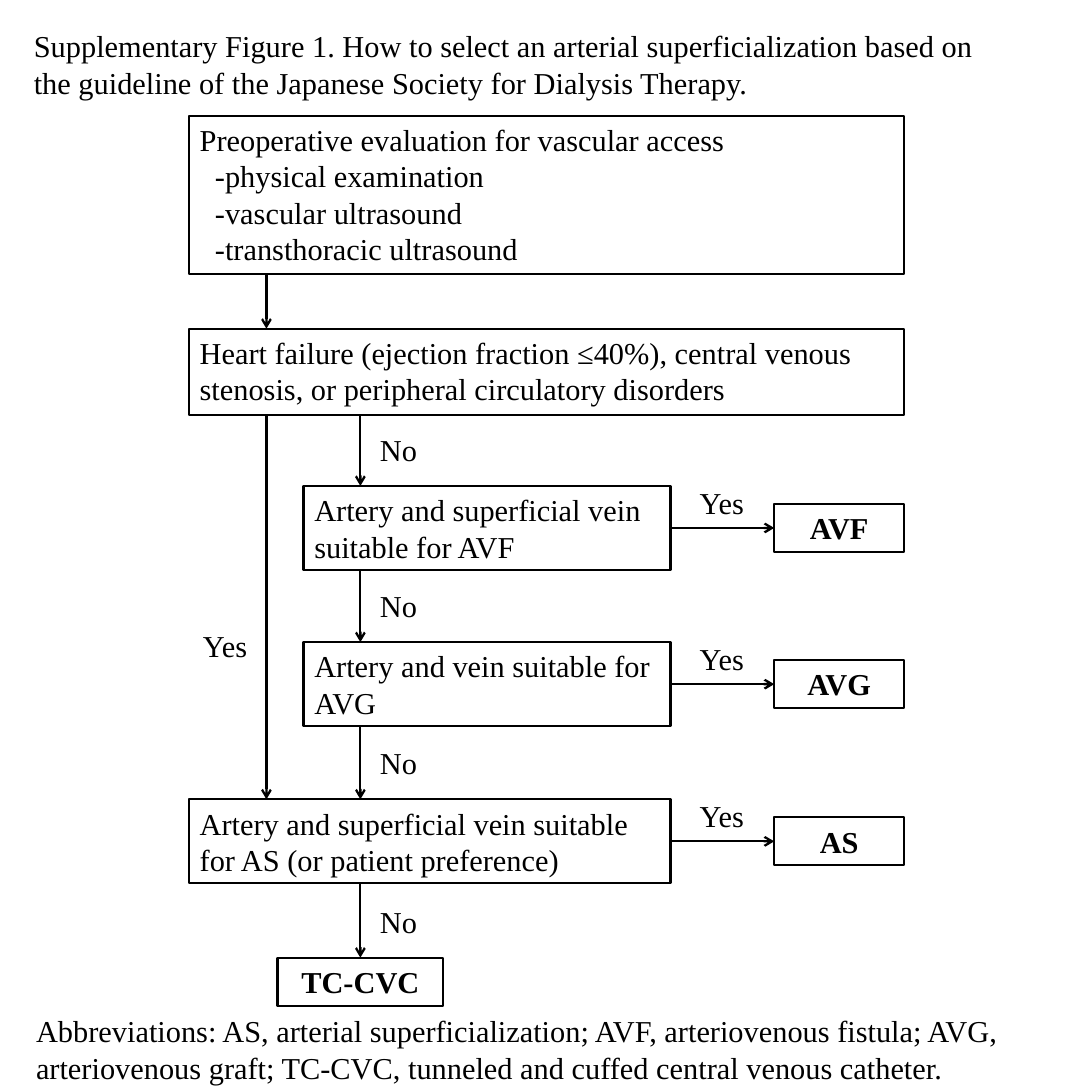
from dataclasses import dataclass

import pptx
import pptx.dml.color
import pptx.enum.shapes
import pptx.enum.text
import pptx.oxml
import pptx.oxml.ns
import pptx.util
from pptx.util import Inches

LEFT = pptx.enum.text.PP_ALIGN.LEFT
CENTER = pptx.enum.text.PP_ALIGN.CENTER
TOP_SIDE, LEFT_SIDE, RIGHT_SIDE = 0, 1, 3


@dataclass(frozen=True)
class Theme:
    """Colours, font and sizes of the flowchart."""
    ink = pptx.dml.color.RGBColor(0, 0, 0)
    font = "Times New Roman"
    text_size = pptx.util.Pt(20)
    line_width = pptx.util.Pt(1.5)


THEME = Theme()


def write_text(shape, text, align=LEFT, bold=False):
    """Put text into a shape and format it."""
    frame = shape.text_frame
    frame.text = text
    frame.word_wrap = True
    frame.vertical_anchor = pptx.enum.text.MSO_ANCHOR.TOP
    for paragraph in frame.paragraphs:
        paragraph.alignment = align
        for run in paragraph.runs:
            run.font.name = THEME.font
            run.font.size = THEME.text_size
            run.font.bold = bold
            run.font.color.rgb = THEME.ink


def add_label(slide, left, top, text, align=LEFT, width=1.08, height=0.44):
    """Add a text box without outline."""
    label = slide.shapes.add_textbox(Inches(left), Inches(top), Inches(width), Inches(height))
    write_text(label, text, align)
    return label


def add_caption(slide, left, top, width, text):
    """Add a caption with wider margins."""
    frame = add_label(slide, left, top, text, width=width, height=0.81).text_frame
    frame.margin_left = frame.margin_right = Inches(0.13)
    frame.margin_top = frame.margin_bottom = Inches(0.07)


def add_box(slide, left, top, width, height, text, align=LEFT, bold=False):
    """Add an outlined box with text."""
    box = slide.shapes.add_shape(
        pptx.enum.shapes.MSO_SHAPE.RECTANGLE,
        Inches(left), Inches(top), Inches(width), Inches(height))
    box.shadow.inherit = False
    box.fill.background()
    box.line.color.rgb = THEME.ink
    box.line.width = THEME.line_width
    write_text(box, text, align, bold)
    return box


def indent_items(box):
    """Indent every paragraph of a box after the first."""
    for paragraph in box.text_frame.paragraphs[1:]:
        paragraph._p.get_or_add_pPr().set("marL", str(Inches(0.14)))


def add_arrow(slide, x1=0, y1=0, x2=0, y2=0):
    """Add a straight line with an open arrowhead at its end."""
    arrow = slide.shapes.add_connector(
        pptx.enum.shapes.MSO_CONNECTOR.STRAIGHT,
        Inches(x1), Inches(y1), Inches(x2), Inches(y2))
    arrow.line.color.rgb = THEME.ink
    arrow.line.width = THEME.line_width
    head = pptx.oxml.parse_xml(f'<a:tailEnd {pptx.oxml.ns.nsdecls("a")} type="arrow"/>')
    arrow.line._get_or_add_ln().append(head)
    effects = pptx.oxml.parse_xml(f'<a:effectLst {pptx.oxml.ns.nsdecls("a")}/>')
    arrow._element.spPr.append(effects)
    return arrow


def add_no_branch(slide, start, end):
    """Add a downward arrow labelled No."""
    add_label(slide, 3.38, end - 0.55, "No")
    return add_arrow(slide, 3.3, start, 3.3, end)


def add_decision(slide, left, top, question, access):
    """Add a question, its Yes arrow and the resulting access."""
    height, result_height, right = 0.77, 0.44, 6.14
    middle = top + height / 2
    box = add_box(slide, left, top, right - left, height, question)
    result = add_box(slide, 7.09, middle - result_height / 2, 1.19, result_height,
                     access, CENTER, True)
    arrow = add_arrow(slide)
    arrow.begin_connect(box, RIGHT_SIDE)
    arrow.end_connect(result, LEFT_SIDE)
    add_label(slide, 6.07, middle - 0.45, "Yes", CENTER)
    return top + height


def main():
    """Build the flowchart slide and save it."""
    presentation = pptx.Presentation()
    presentation.slide_width = presentation.slide_height = Inches(10)
    slide = presentation.slides.add_slide(presentation.slide_layouts[6])

    add_caption(slide, 0.18, 0.18, 9.15,
                "Supplementary Figure 1. How to select an arterial superficialization "
                "based on the guideline of the Japanese Society for Dialysis Therapy.")
    evaluation = add_box(slide, 1.73, 1.06, 6.55, 1.45,
                         "Preoperative evaluation for vascular access\n"
                         "-physical examination\n"
                         "-vascular ultrasound\n"
                         "-transthoracic ultrasound")
    indent_items(evaluation)
    add_arrow(slide, 2.44, 2.51, 2.44, 3.01)
    add_box(slide, 1.73, 3.01, 6.55, 0.79,
            "Heart failure (ejection fraction ≤40%), central venous stenosis, "
            "or peripheral circulatory disorders")
    add_arrow(slide, 2.44, 3.8, 2.44, 7.32)
    add_label(slide, 1.76, 5.69, "Yes")

    decisions = [
        (2.78, 4.45, "Artery and superficial vein suitable for AVF", "AVF"),
        (2.78, 5.88, "Artery and vein suitable for AVG", "AVG"),
        (1.73, 7.32, "Artery and superficial vein suitable for AS (or patient preference)", "AS"),
    ]
    bottom = 3.8
    for left, top, question, access in decisions:
        add_no_branch(slide, bottom, top)
        bottom = add_decision(slide, left, top, question, access)

    catheter = add_box(slide, 2.54, 8.77, 1.52, 0.44, "TC-CVC", CENTER, True)
    add_no_branch(slide, bottom, 8.77).end_connect(catheter, TOP_SIDE)
    add_caption(slide, 0.2, 9.2, 9.62,
                "Abbreviations: AS, arterial superficialization; AVF, arteriovenous fistula; "
                "AVG, arteriovenous graft; TC-CVC, tunneled and cuffed central venous catheter.")
    presentation.save("out.pptx")


if __name__ == "__main__":
    main()
